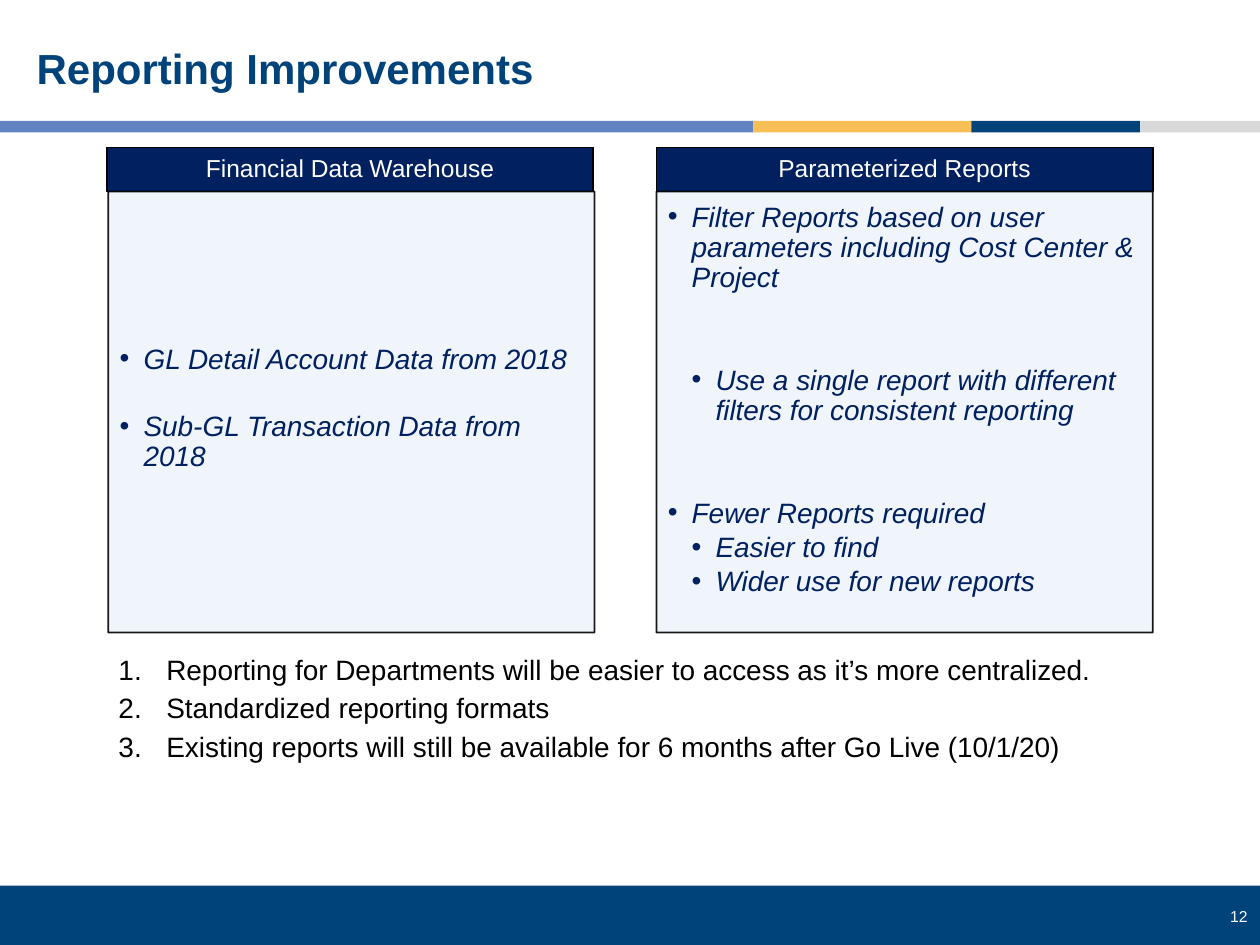
from lxml import etree
from pptx import Presentation
from pptx import util as u
from pptx.dml.color import RGBColor
from pptx.enum import shapes, text
from pptx.oxml.ns import qn

COLORS = {
    "navy": "002060", "blue": "00437B", "sky": "6283C2", "gold": "F8BF56",
    "grey": "D9D9D9", "pale": "EFF4FC", "white": "FFFFFF", "black": "000000",
}
SLIDE_W, SLIDE_H = u.Inches(10), u.Inches(7.5)
HEADER_TOP, HEADER_H = 15.6, 4.67
PANEL_TOP, PANEL_H = HEADER_TOP + HEADER_H, 46.67
STEP = 0.19

WAREHOUSE = [
    ("GL Detail Account Data from 2018", 1, 21.4),
    ("Sub-GL Transaction Data from 2018", 1, 0),
]
PARAMETERIZED = [
    ("Filter Reports based on user parameters including Cost Center & Project", 1, 41.4),
    ("Use a single report with different filters for consistent reporting", 2, 41.4),
    ("Fewer Reports required", 1, 2.4),
    ("Easier to find", 2, 2.4),
    ("Wider use for new reports", 2, 0),
]
BENEFITS = [
    "Reporting for Departments will be easier to access as it’s more centralized.",
    "Standardized reporting formats",
    "Existing reports will still be available for 6 months after Go Live (10/1/20)",
]


def rgb(name):
    return RGBColor.from_string(COLORS[name])


def share(left, top, width, height):
    return (int(SLIDE_W * left / 100), int(SLIDE_H * top / 100),
            int(SLIDE_W * width / 100), int(SLIDE_H * height / 100))


def move(placeholder, area):
    placeholder.left, placeholder.top, placeholder.width, placeholder.height = share(*area)


def set_frame(frame, anchor="TOP", insets=(0.1, 0.05, 0.1, 0.05)):
    frame.word_wrap = True
    frame.auto_size = text.MSO_AUTO_SIZE.NONE
    frame.vertical_anchor = text.MSO_ANCHOR[anchor]
    (frame.margin_left, frame.margin_top,
     frame.margin_right, frame.margin_bottom) = map(u.Inches, insets)


def add_marker(paragraph, tag, indent, hanging, **attributes):
    properties = paragraph._p.get_or_add_pPr()
    properties.set("marL", str(u.Inches(indent)))
    properties.set("indent", str(-u.Inches(hanging)))
    etree.SubElement(properties, qn("a:buFont"), typeface="Arial")
    etree.SubElement(properties, qn(tag), **attributes)


def write(paragraph, words, size=16, color="black", bold=False, italic=False,
          align="LEFT", spacing=1.0, after=0):
    paragraph.alignment = text.PP_ALIGN[align]
    paragraph.line_spacing = spacing
    paragraph.space_before = u.Pt(0)
    paragraph.space_after = u.Pt(after)
    run = paragraph.add_run()
    run.text = words
    run.font.name = "Arial"
    run.font.size = u.Pt(size)
    run.font.bold, run.font.italic = bold, italic
    run.font.color.rgb = rgb(color)


def next_paragraph(frame, index):
    return frame.add_paragraph() if index else frame.paragraphs[0]


def add_block(slide, area, fill, line=None):
    block = slide.shapes.add_shape(shapes.MSO_SHAPE.RECTANGLE, *share(*area))
    block.shadow.inherit = False
    block.fill.solid()
    block.fill.fore_color.rgb = rgb(fill)
    if line:
        block.line.color.rgb = rgb(line)
        block.line.width = u.Pt(1)
    else:
        block.line.fill.background()
    return block


def set_opacity(fill, percent):
    color = fill._xPr.find(qn("a:solidFill"))[0]
    etree.SubElement(color, qn("a:alpha"), val=str(percent * 1000))


def add_panel(slide, heading, points, left, width, shift=0, anchor="TOP"):
    header = add_block(slide, (left, HEADER_TOP, width, HEADER_H), "navy", "black")
    set_frame(header.text_frame, "MIDDLE", (0.11, 0.06, 0.11, 0.06))
    write(header.text_frame.paragraphs[0], heading, size=14, color="white",
          align="CENTER", spacing=0.9)

    panel = add_block(slide, (left + shift, PANEL_TOP, width, PANEL_H), "pale", "black")
    set_opacity(panel.fill, 90)
    set_opacity(panel.line.fill, 90)
    set_frame(panel.text_frame, anchor, (0.09, 0.09, 0.12, 0.14))
    for index, (words, level, after) in enumerate(points):
        paragraph = next_paragraph(panel.text_frame, index)
        paragraph.level = level
        add_marker(paragraph, "a:buChar", STEP * level, STEP, char="•")
        write(paragraph, words, color="navy", italic=True, spacing=0.9, after=after)


def add_template_bars(slide):
    edges = [0, 59.8, 77.1, 90.5, 100]
    for start, end, color in zip(edges, edges[1:], ("sky", "gold", "blue", "grey")):
        add_block(slide, (start, 12.8, end - start, 1.2), color)
    add_block(slide, (0, 93.73, 100, 6.27), "blue")


def add_page_number(slide, number):
    page = slide.shapes.add_textbox(*share(93.1, 95.33, 6.9, 3.33))
    set_frame(page.text_frame)
    write(page.text_frame.paragraphs[0], number, size=9, color="white", align="RIGHT")


def fill_title(title, words):
    move(title, (1.9, 2.93, 95.7, 9.2))
    set_frame(title.text_frame, "MIDDLE")
    write(title.text_frame.paragraphs[0], words, size=24, color="blue",
          bold=True, spacing=0.9)


def fill_numbered_list(body, points):
    move(body, (8.4, 68.4, 86.3, 12.8))
    set_frame(body.text_frame)
    for index, words in enumerate(points):
        paragraph = next_paragraph(body.text_frame, index)
        add_marker(paragraph, "a:buAutoNum", 2 * STEP, 2 * STEP, type="arabicPeriod")
        write(paragraph, words, after=2.7)


def main():
    deck = Presentation()
    deck.slide_width, deck.slide_height = SLIDE_W, SLIDE_H
    slide = deck.slides.add_slide(deck.slide_layouts[1])
    add_template_bars(slide)
    add_page_number(slide, "12")
    fill_title(slide.shapes.title, "Reporting Improvements")
    add_panel(slide, "Financial Data Warehouse", WAREHOUSE, 8.5, 38.6,
              shift=0.1, anchor="MIDDLE")
    add_panel(slide, "Parameterized Reports", PARAMETERIZED, 52.1, 39.4)
    fill_numbered_list(slide.placeholders[1], BENEFITS)
    deck.save("out.pptx")


if __name__ == "__main__":
    main()
